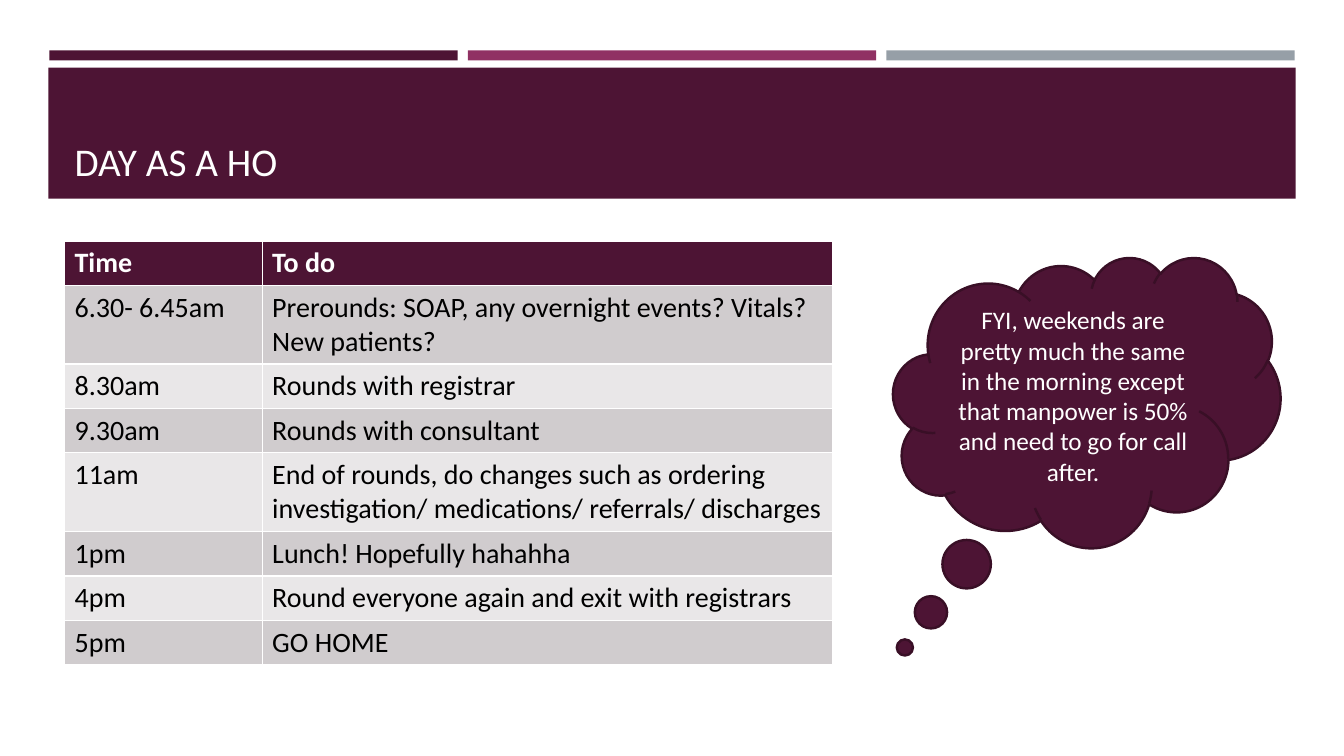
from pptx import Presentation
from pptx.dml.color import RGBColor
from pptx.enum import shapes, text
from pptx.util import Inches, Pt

PLUM = RGBColor(0x4D, 0x14, 0x34)
DARK_PLUM = RGBColor(0x39, 0x0F, 0x26)
MAGENTA = RGBColor(0x90, 0x31, 0x63)
GREY = RGBColor(0x96, 0x9F, 0xA7)
BAND_DARK = RGBColor(0xD0, 0xCC, 0xCE)
BAND_LIGHT = RGBColor(0xE9, 0xE7, 0xE8)
WHITE = RGBColor(0xFF, 0xFF, 0xFF)
BLACK = RGBColor(0, 0, 0)

SCHEDULE = [
    ("Time", "To do"),
    ("6.30- 6.45am", "Prerounds: SOAP, any overnight events? Vitals? New patients?"),
    ("8.30am", "Rounds with registrar"),
    ("9.30am", "Rounds with consultant"),
    ("11am", "End of rounds, do changes such as ordering investigation/ "
             "medications/ referrals/ discharges"),
    ("1pm", "Lunch! Hopefully hahahha"),
    ("4pm", "Round everyone again and exit with registrars"),
    ("5pm", "GO HOME"),
]


def add_filled_shape(kind, left, top, width, height, fill):
    shape = page.shapes.add_shape(
        kind, Inches(left), Inches(top), Inches(width), Inches(height))
    shape.shadow.inherit = False
    shape.fill.solid()
    shape.fill.fore_color.rgb = fill
    shape.line.fill.background()
    return shape


def style_text(para, size, color, bold=False):
    para.font.name = "Calibri"
    para.font.size = Pt(size)
    para.font.bold = bold
    para.font.color.rgb = color


deck = Presentation()
deck.slide_width = Inches(13.33)
deck.slide_height = Inches(7.5)
page = deck.slides.add_slide(deck.slide_layouts[5])

# Header: three thin bars above a wide band
for column, color in enumerate((PLUM, MAGENTA, GREY)):
    add_filled_shape(shapes.MSO_SHAPE.RECTANGLE, 0.49 + 4.15 * column, 0.5, 4.05, 0.1, color)
add_filled_shape(shapes.MSO_SHAPE.RECTANGLE, 0.48, 0.67, 12.37, 1.3, PLUM)

# Title, brought in front of the band
title = page.shapes.title
page.shapes._spTree.append(title._element)
title.left, title.top = Inches(0.64), Inches(0.77)
title.width, title.height = Inches(12.06), Inches(1.11)
title.text_frame.text = "DAY AS A HO"
title.text_frame.auto_size = text.MSO_AUTO_SIZE.NONE
title.text_frame.vertical_anchor = text.MSO_ANCHOR.BOTTOM
title.text_frame.paragraphs[0].alignment = text.PP_ALIGN.LEFT
style_text(title.text_frame.paragraphs[0], 28, WHITE)

# Schedule
table = page.shapes.add_table(
    len(SCHEDULE), 2, Inches(0.64), Inches(2.39), Inches(7.62),
    Inches(0.41 * len(SCHEDULE))).table
table.columns[0].width = Inches(1.96)
table.columns[1].width = Inches(5.66)
for row, entries in enumerate(SCHEDULE):
    is_header = row == 0
    band = PLUM if is_header else BAND_DARK if row % 2 else BAND_LIGHT
    for column, entry in enumerate(entries):
        cell = table.cell(row, column)
        cell.text = entry
        cell.fill.solid()
        cell.fill.fore_color.rgb = band
        style_text(cell.text_frame.paragraphs[0], 20, WHITE if is_header else BLACK, is_header)

# Thought cloud
cloud = add_filled_shape(shapes.MSO_SHAPE.CLOUD_CALLOUT, 8.86, 2.55, 3.84, 2.88, PLUM)
cloud.adjustments[0] = -0.47
cloud.adjustments[1] = 0.845
cloud.line.color.rgb = DARK_PLUM
cloud.line.width = Pt(1.75)
cloud.text_frame.word_wrap = True
cloud.text_frame.vertical_anchor = text.MSO_ANCHOR.MIDDLE
cloud.text_frame.text = ("FYI, weekends are pretty much the same in the morning except "
                         "that manpower is 50% and need to go for call after.")
cloud.text_frame.paragraphs[0].alignment = text.PP_ALIGN.CENTER
style_text(cloud.text_frame.paragraphs[0], 18, WHITE)

deck.save("out.pptx")
